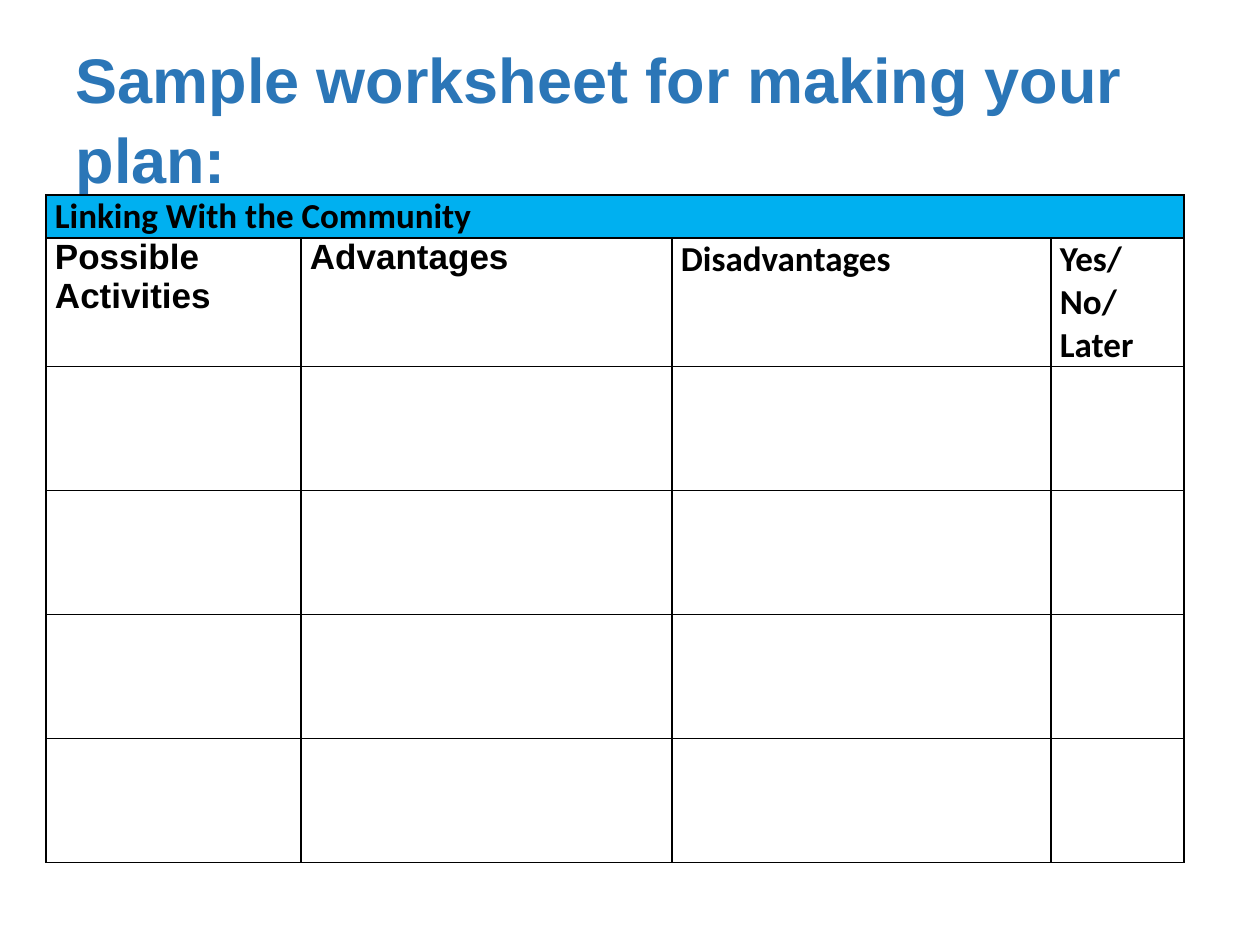
from dataclasses import dataclass

from lxml.etree import SubElement
from pptx import Presentation
from pptx.dml.color import RGBColor
from pptx.enum.text import MSO_ANCHOR, MSO_AUTO_SIZE, PP_ALIGN
from pptx.oxml.ns import qn
from pptx.util import Pt

PX = 914400 // 126


@dataclass(frozen=True)
class Theme:
    title_color: str = "2B76B7"
    text_color: str = "000000"
    band_color: str = "00B0F0"
    border_color: str = "000000"
    title_size: int = 36
    cell_size: int = 20
    border_width: int = 1
    heading_font: str = "Arial"
    body_font: str = "Calibri"


def write(tf, text, *, font, size, color, spacing=1.0):
    """Fill a text frame with one bold, left-aligned paragraph."""
    p = tf.paragraphs[0]
    p.alignment = PP_ALIGN.LEFT
    p.line_spacing = spacing
    r = p.add_run()
    r.text = text
    r.font.name = font
    r.font.size = Pt(size)
    r.font.bold = True
    r.font.color.rgb = RGBColor.from_string(color)


class Worksheet:
    """Holds the theme and the current slide, and adds elements to it."""

    def __init__(self, prs, theme):
        self.theme = theme
        self.slide = prs.slides.add_slide(prs.slide_layouts[5])

    def title(self, text, x, y, w, h):
        sp = self.slide.shapes.title
        sp.left, sp.top, sp.width, sp.height = (v * PX for v in (x, y, w, h))
        tf = sp.text_frame
        tf.word_wrap = True
        tf.auto_size = MSO_AUTO_SIZE.NONE
        tf.vertical_anchor = MSO_ANCHOR.MIDDLE
        write(tf, text, font=self.theme.heading_font, size=self.theme.title_size,
              color=self.theme.title_color, spacing=1.05)

    def table(self, x, y, widths, heights):
        frame = self.slide.shapes.add_table(
            len(heights), len(widths), x * PX, y * PX,
            sum(widths) * PX, sum(heights) * PX)
        table = frame.table
        table.first_row = table.horz_banding = False
        for column, width in zip(table.columns, widths):
            column.width = width * PX
        for row, height in zip(table.rows, heights):
            row.height = height * PX
        for cell in table.iter_cells():
            cell.margin_left = cell.margin_right = 9 * PX
            cell.margin_top = cell.margin_bottom = 0
            self.borders(cell)
            cell.fill.background()
        return table

    def borders(self, cell):
        props = cell._tc.get_or_add_tcPr()
        for side in ("a:lnL", "a:lnR", "a:lnT", "a:lnB"):
            line = SubElement(props, qn(side), w=str(Pt(self.theme.border_width)))
            fill = SubElement(line, qn("a:solidFill"))
            SubElement(fill, qn("a:srgbClr"), val=self.theme.border_color)

    def cell_text(self, cell, text, font):
        write(cell.text_frame, text, font=font, size=self.theme.cell_size,
              color=self.theme.text_color)


def main():
    prs = Presentation()
    prs.slide_width, prs.slide_height = 1260 * PX, 945 * PX
    theme = Theme()
    sheet = Worksheet(prs, theme)
    sheet.title("Sample worksheet for making your plan:", 63, 38, 1134, 157)

    entry_rows = 4
    table = sheet.table(46, 195, [255, 371, 379, 133],
                        [43, 128] + [124] * entry_rows)
    band = table.cell(0, 0)
    band.merge(table.cell(0, 3))
    band.fill.solid()
    band.fill.fore_color.rgb = RGBColor.from_string(theme.band_color)
    sheet.cell_text(band, "Linking With the Community", theme.body_font)

    headings = [
        ("Possible Activities", theme.heading_font),
        ("Advantages", theme.heading_font),
        ("Disadvantages", theme.body_font),
        ("Yes/No/ Later", theme.body_font),
    ]
    for col, (text, font) in enumerate(headings):
        sheet.cell_text(table.cell(1, col), text, font)

    prs.save("out.pptx")


if __name__ == "__main__":
    main()
